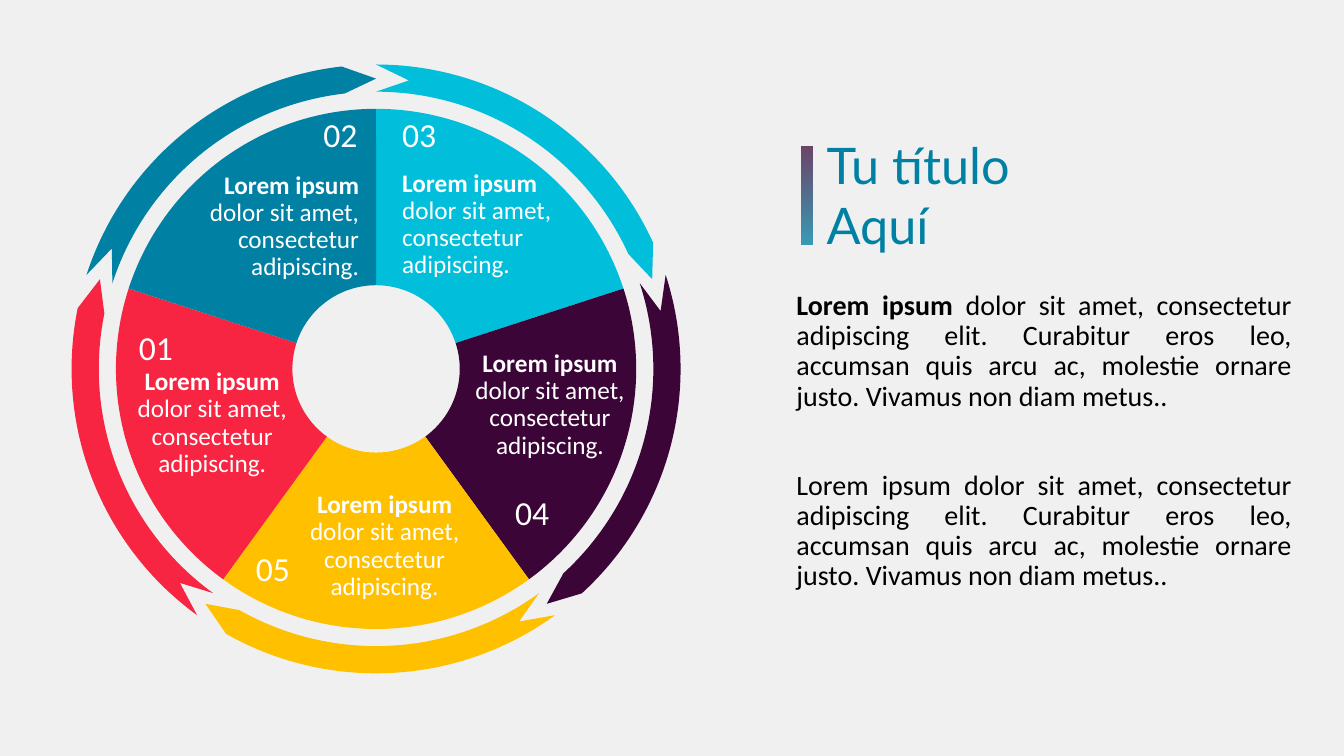
"""Build a slide with a five-part wheel ringed by arrows, a title and body text."""
import math

from lxml import etree
from pptx import Presentation, util as u
from pptx.dml.color import RGBColor
from pptx.enum import shapes, text
from pptx.oxml.ns import qn

COLORS = {"background": "F0F0F0", "cyan": "01BFDA", "purple": "3B0538",
          "yellow": "FFC000", "red": "F72541", "blue": "0081A4",
          "white": "FFFFFF", "black": "000000"}
LEFT, CENTER, RIGHT, JUSTIFY = (text.PP_ALIGN.LEFT, text.PP_ALIGN.CENTER,
                                text.PP_ALIGN.RIGHT, text.PP_ALIGN.JUSTIFY)
LEAD = "Lorem ipsum "
SECTOR_REST = "dolor sit amet, consectetur adipiscing."
BODY_REST = ("dolor sit amet, consectetur adipiscing elit. Curabitur eros leo, "
             "accumsan quis arcu ac, molestie ornare justo. Vivamus non diam metus..")
SECTORS = [
    ("cyan", "03", (3.89, 1.08, 1.63, 0.5), (3.89, 1.64), LEFT),
    ("purple", "04", (5.01, 4.83, 0.61, 0.5), (4.54, 3.43), CENTER),
    ("yellow", "05", (2.44, 5.39, 0.61, 0.5), (2.9, 4.83), CENTER),
    ("red", "01", (1.28, 3.19, 0.61, 0.5), (1.19, 3.61), CENTER),
    ("blue", "02", (3.11, 1.08, 0.61, 0.5), (1.83, 1.66), RIGHT),
]
TITLE = ["Tu título", "Aquí"]
BAR_STOPS = [("purple", 73), ("blue", 77)]

WHEEL_X, WHEEL_Y = 3.73, 3.66
HUB_RADIUS, WHEEL_RADIUS = 0.83, 2.58
ARROW_INNER, ARROW_MIDDLE, ARROW_OUTER = 2.75, 2.88, 3.02
STEP = 360 / len(SECTORS)
POINT_ANGLE = 6.5


def rgb(name):
    return RGBColor.from_string(COLORS[name])


def polar(radius, angle, tangent=0):
    turn = math.radians(angle)
    x = WHEEL_X + radius * (math.sin(turn) + tangent * math.cos(turn))
    y = WHEEL_Y - radius * (math.cos(turn) - tangent * math.sin(turn))
    return u.Inches(x), u.Inches(y)


def arc(radius, start, end, pieces=2):
    sweep = (end - start) / pieces
    pull = 4 / 3 * math.tan(math.radians(sweep) / 4)
    cuts = [start + sweep * i for i in range(pieces + 1)]
    return [[polar(radius, a, pull), polar(radius, b, -pull), polar(radius, b)]
            for a, b in zip(cuts, cuts[1:])]


def sector_outline(start):
    end = start + STEP
    return [[polar(WHEEL_RADIUS, start)], *arc(WHEEL_RADIUS, start, end),
            [polar(HUB_RADIUS, end)], *arc(HUB_RADIUS, end, start, 1)]


def arrow_outline(start):
    tip = start + STEP
    shoulder = tip - POINT_ANGLE
    return [[polar(ARROW_OUTER, start)], *arc(ARROW_OUTER, start, shoulder),
            [polar(ARROW_MIDDLE, tip)], [polar(ARROW_INNER, shoulder)],
            *arc(ARROW_INNER, shoulder, start),
            [polar(ARROW_MIDDLE, start + POINT_ANGLE)]]


def add_outline(group, segments, color):
    points = [point for segment in segments for point in segment]
    builder = group.shapes.build_freeform(*points[0], scale=1.0)
    builder.add_line_segments(points[1:], close=True)
    shape = builder.convert_to_shape()
    shape.shadow.inherit = False
    shape.fill.solid()
    shape.fill.fore_color.rgb = rgb(color)
    shape.line.fill.background()
    lines = iter(list(shape._element.iter(qn("a:lnTo"))))
    for segment in segments[1:]:
        first, *others = [next(lines) for _ in segment]
        if others:
            first.tag = qn("a:cubicBezTo")
        for other in others:
            first.append(other[0])
            other.getparent().remove(other)


def add_text(slide, box, paragraphs, size, color, align=LEFT, font="Calibri",
             line_spacing=None, gaps=()):
    frame = slide.shapes.add_textbox(*map(u.Inches, box)).text_frame
    frame.word_wrap = True
    for index, runs in enumerate(paragraphs):
        paragraph = frame.add_paragraph() if index else frame.paragraphs[0]
        paragraph.alignment = align
        paragraph.line_spacing = line_spacing
        if gaps:
            paragraph.space_before = u.Pt(gaps[index])
        paragraph.font.size = u.Pt(size)
        paragraph.font.name = font
        paragraph.font.color.rgb = rgb(color)
        for words, bold in runs:
            run = paragraph.add_run()
            run.text = words
            run.font.bold = bold


def add_bar(slide):
    bar = slide.shapes.add_shape(shapes.MSO_SHAPE.RECTANGLE,
                                 *map(u.Inches, (7.95, 1.45, 0.11, 0.98)))
    bar.shadow.inherit = False
    bar.line.fill.background()
    bar.fill.gradient()
    bar.fill.gradient_angle = 270
    for stop, position, (color, _) in zip(bar.fill.gradient_stops, (0, 1), BAR_STOPS):
        stop.position = position
        stop.color.rgb = rgb(color)
    for element, (_, opacity) in zip(bar._element.spPr.iter(qn("a:srgbClr")), BAR_STOPS):
        etree.SubElement(element, qn("a:alpha"), val=str(opacity * 1000))


def main():
    presentation = Presentation()
    presentation.slide_width = u.Inches(13.33)
    presentation.slide_height = u.Inches(7.5)
    slide = presentation.slides.add_slide(presentation.slide_layouts[6])
    slide.background.fill.solid()
    slide.background.fill.fore_color.rgb = rgb("background")

    wheel = slide.shapes.add_group_shape()
    for outline in (arrow_outline, sector_outline):
        for index, (color, *_) in enumerate(SECTORS):
            add_outline(wheel, outline(index * STEP), color)

    for _, number, number_box, words_at, align in SECTORS:
        add_text(slide, number_box, [[(number, False)]], 24, "white")
        add_text(slide, (*words_at, 1.83, 0.94), [[(LEAD, True), (SECTOR_REST, False)]],
                 18, "white", align, line_spacing=0.9, gaps=(10,))

    add_text(slide, (7.8, 2.84, 5.11, 4.45),
             [[(LEAD, True), (BODY_REST, False)], [(LEAD + BODY_REST, False)]],
             20, "black", JUSTIFY, line_spacing=0.9, gaps=(10, 42))
    add_text(slide, (8.1, 1.28, 4.69, 1.31), [[(line, False)] for line in TITLE],
             36, "blue", font="Lato")
    add_bar(slide)
    presentation.save("out.pptx")


if __name__ == "__main__":
    main()
